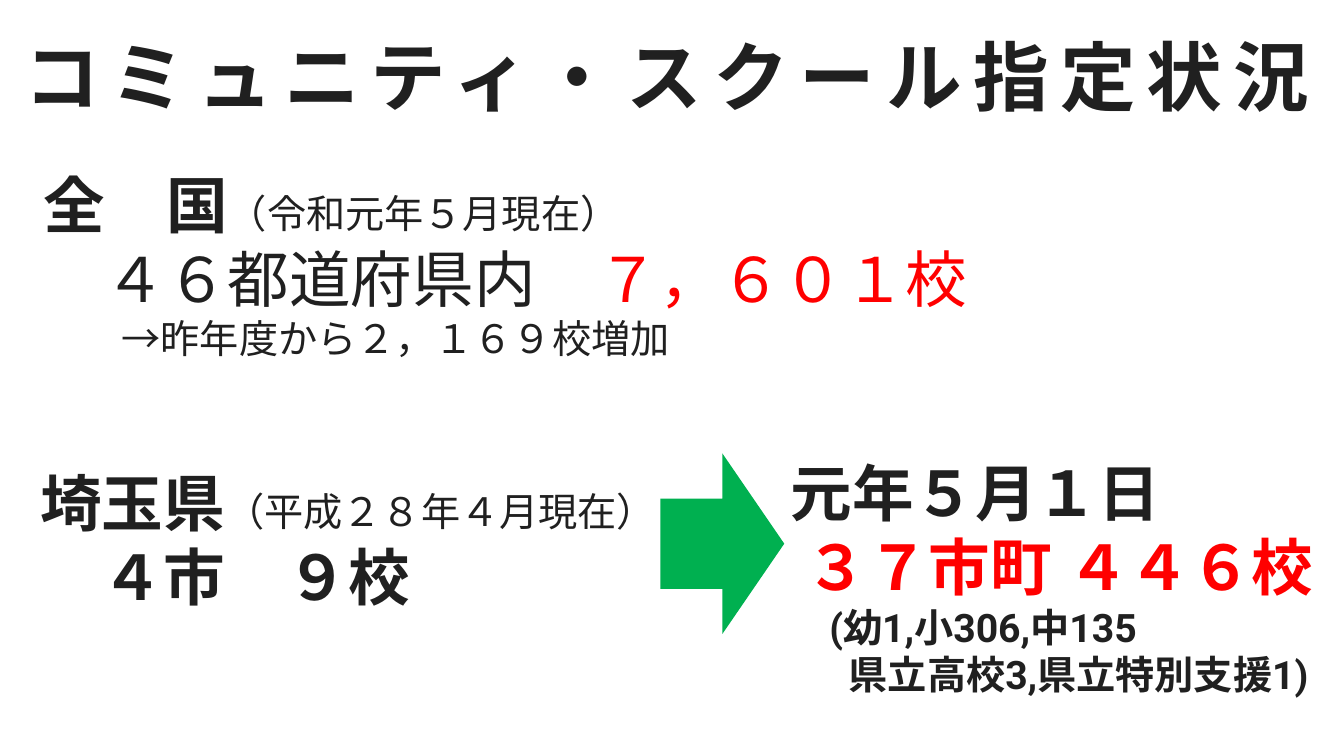
from lxml import etree
from pptx import Presentation
from pptx import util as u
from pptx.dml.color import RGBColor
from pptx.enum import lang, shapes, text
from pptx.oxml import ns

INK = RGBColor(0x20, 0x20, 0x20)
RED = RGBColor(0xFF, 0x00, 0x00)
GREEN = RGBColor(0x00, 0xB0, 0x50)
WHITE = RGBColor(0xFF, 0xFF, 0xFF)
FONT = "Roboto"
LARGE, SMALL = 44, 28


def add_run(paragraph, wording, size, bold=False, color=INK):
    run = paragraph.add_run()
    run.text = wording
    run.font.color.rgb = color
    values = {"name": FONT, "size": u.Pt(size), "bold": bold,
              "language_id": lang.MSO_LANGUAGE_ID.JAPANESE}
    for name, value in values.items():
        setattr(run.font, name, value)
    etree.SubElement(run.font._element, ns.qn("a:ea"), typeface=FONT)
    return run


def add_plain_shape(kind, left, top, width, height, color):
    shape = slide.shapes.add_shape(kind, *map(u.Cm, (left, top, width, height)))
    shape.shadow.inherit = False
    shape.fill.solid()
    shape.fill.fore_color.rgb = color
    shape.line.fill.background()
    return shape


presentation = Presentation()
presentation.slide_width, presentation.slide_height = u.Cm(33.87), u.Cm(19.05)
slide = presentation.slides.add_slide(presentation.slide_layouts[5])

# Text panels: frame, then lines of (indent in cm, runs)
panels = [
    ((0.56, 3.84, 31.29, 5.64), [
        (0, [("全　国", LARGE, True), ("（令和元年５月現在）", SMALL)]),
        (1.55, [("４６都道府県内　", LARGE), ("７，６０１校", LARGE, False, RED)]),
        (1.98, [("→昨年度から２，１６９校増加", SMALL)]),
    ]),
    ((0.56, 11.43, 16.94, 4.29), [
        (0, [("埼玉県", LARGE, True), ("（平成２８年４月現在）", SMALL)]),
        (1.55, [("４市　９校", LARGE, True)]),
    ]),
    ((19.33, 11.02, 13.94, 6.99), [
        (0, [("元年５月１日", LARGE, True)]),
        (0.38, [("３７市町 ４４６校", LARGE, True, RED)]),
        (0.98, [("(幼1,小306,中135", SMALL, True)]),
        (1.47, [("県立高校3,県立特別支援1)", SMALL, True)]),
    ]),
]
for frame, lines in panels:
    panel = add_plain_shape(shapes.MSO_SHAPE.ROUNDED_RECTANGLE, *frame, WHITE)
    body = panel.text_frame
    body.word_wrap = False
    body.vertical_anchor = text.MSO_ANCHOR.MIDDLE
    for index, (indent, runs) in enumerate(lines):
        paragraph = body.add_paragraph() if index else body.paragraphs[0]
        paragraph.alignment = text.PP_ALIGN.LEFT
        paragraph._p.get_or_add_pPr().set("marL", str(u.Cm(indent)))
        for run in runs:
            add_run(paragraph, *run)

# Title
title = slide.shapes.title
title_frame = {"left": -0.36, "top": 0.61, "width": 33.63, "height": 2.44}
for name, value in title_frame.items():
    setattr(title, name, u.Cm(value))
title_format = {"word_wrap": False, "auto_size": text.MSO_AUTO_SIZE.SHAPE_TO_FIT_TEXT,
                "vertical_anchor": text.MSO_ANCHOR.MIDDLE, "margin_bottom": 0}
for name, value in title_format.items():
    setattr(title.text_frame, name, value)
heading = title.text_frame.paragraphs[0]
heading.alignment = text.PP_ALIGN.RIGHT
heading_run = add_run(heading, "コミュニティ・スクール指定状況", 54, True)
heading_run.font._element.set("spc", "800")

# Arrow from the earlier count to the current one
arrow = add_plain_shape(shapes.MSO_SHAPE.DOWN_ARROW, 15.93, 12.14, 4.55, 3.12, GREEN)
arrow.rotation = 270

presentation.save("out.pptx")
